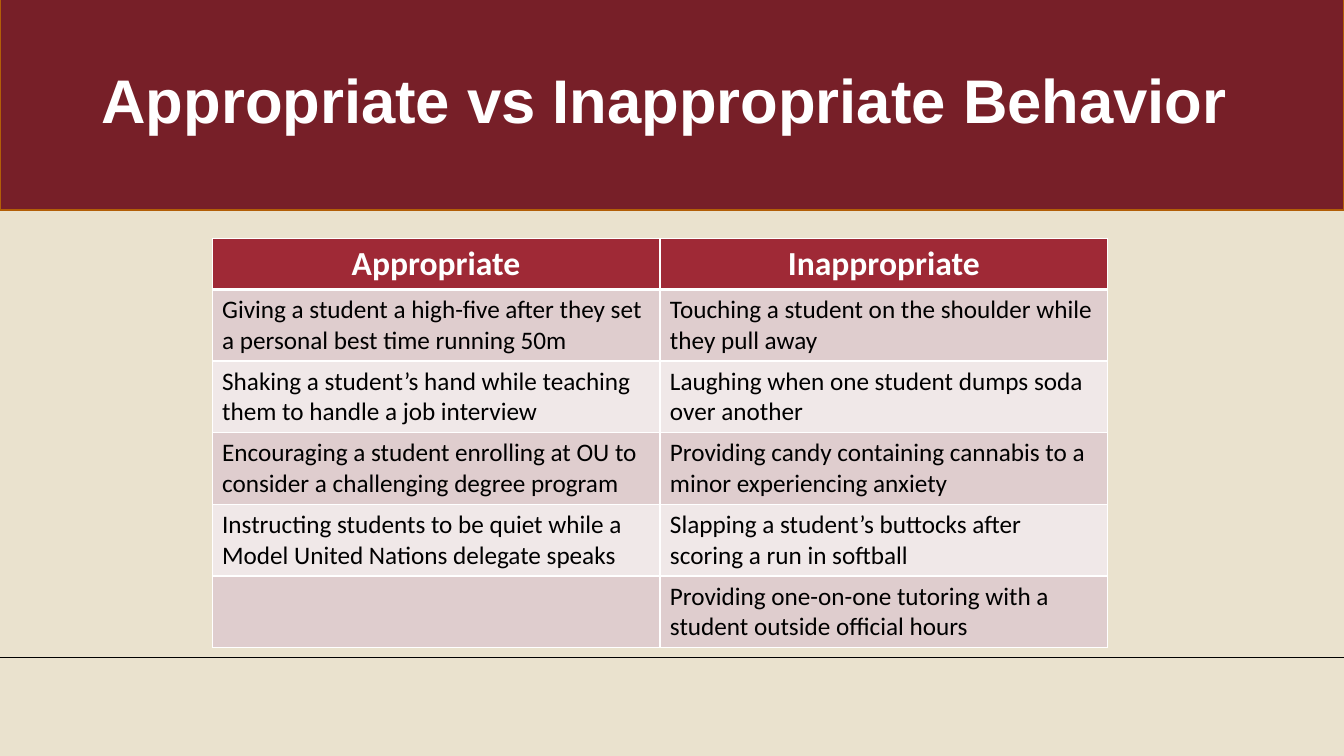
import dataclasses

import lxml.etree
import pptx
import pptx.dml.color
import pptx.enum.shapes
import pptx.enum.text
import pptx.oxml.ns
import pptx.util

PX = 9525
WIDE, HIGH = 1280, 720
HEADS = ("Appropriate", "Inappropriate")
ROWS = (
    ("Giving a student a high-five after they set a personal best time running 50m",
     "Touching a student on the shoulder while they pull away"),
    ("Shaking a student’s hand while teaching them to handle a job interview",
     "Laughing when one student dumps soda over another"),
    ("Encouraging a student enrolling at OU to consider a challenging degree program",
     "Providing candy containing cannabis to a minor experiencing anxiety"),
    ("Instructing students to be quiet while a Model United Nations delegate speaks",
     "Slapping a student’s buttocks after scoring a run in softball"),
    ("", "Providing one-on-one tutoring with a student outside official hours"),
)


@dataclasses.dataclass(frozen=True)
class Theme:
    """Colours, fonts and type sizes of the slide."""
    sand: str = "EAE2CE"
    wine: str = "771F28"
    amber: str = "B25E07"
    red: str = "9F2936"
    bands: tuple = ("DFCDCE", "F0E8E8")
    white: str = "FFFFFF"
    black: str = "000000"
    title_font: str = "Arial"
    body_font: str = "Calibri"
    title_size: int = 44
    head_size: int = 24
    body_size: int = 18


THEME = Theme()


def rgb(code):
    """Turn a hex code into a colour."""
    return pptx.dml.color.RGBColor.from_string(code)


def emu(*sizes):
    """Turn px lengths into EMU."""
    return [size * PX for size in sizes]


def paint(fill, code):
    """Make a fill solid in one colour."""
    fill.solid()
    fill.fore_color.rgb = rgb(code)


def style(para, face, size, code, bold):
    """Set the font of a paragraph."""
    font = para.font
    font.name, font.size, font.bold = face, pptx.util.Pt(size), bold
    font.color.rgb = rgb(code)


def edge(cell, side, width):
    """Draw one white border of a cell."""
    name = pptx.oxml.ns.qn
    line = lxml.etree.SubElement(cell._tc.get_or_add_tcPr(), name("a:ln" + side),
                                 w=str(pptx.util.Pt(width)))
    fill = lxml.etree.SubElement(line, name("a:solidFill"))
    lxml.etree.SubElement(fill, name("a:srgbClr"), val=THEME.white)


def banner(slide, left, top, wide, high):
    """Place the title on its dark band."""
    band = slide.shapes.add_shape(pptx.enum.shapes.MSO_SHAPE.RECTANGLE,
                                  *emu(left, top, wide, high))
    band.shadow.inherit = False
    paint(band.fill, THEME.wine)
    band.line.color.rgb = rgb(THEME.amber)
    band.line.width = pptx.util.Pt(1)

    title = slide.shapes.title
    title.element.getparent().append(title.element)
    title.left, title.top, title.width, title.height = emu(
        left + 87, top + 41, wide - 155, 139)
    frame = title.text_frame
    frame.text = "Appropriate vs Inappropriate Behavior"
    frame.word_wrap = True
    frame.auto_size = pptx.enum.text.MSO_AUTO_SIZE.NONE
    frame.vertical_anchor = pptx.enum.text.MSO_ANCHOR.MIDDLE
    para = frame.paragraphs[0]
    para.alignment = pptx.enum.text.PP_ALIGN.LEFT
    para.line_spacing = 0.9
    style(para, THEME.title_font, THEME.title_size, THEME.white, True)


def rule(slide, left, top, wide):
    """Draw the thin line above the footer."""
    line = slide.shapes.add_connector(pptx.enum.shapes.MSO_CONNECTOR.STRAIGHT,
                                      *emu(left, top, left + wide, top))
    line.line.color.rgb = rgb(THEME.black)
    line.line.width = pptx.util.Pt(0.5)
    lxml.etree.SubElement(line.element.spPr, pptx.oxml.ns.qn("a:effectLst"))


def grid(slide, left, top, wide, head, step):
    """Place the table of paired examples."""
    high = head + step * len(ROWS)
    table = slide.shapes.add_table(len(ROWS) + 1, len(HEADS),
                                   *emu(left, top, wide, high)).table
    for r, words in enumerate((HEADS, *ROWS)):
        first = r == 0
        table.rows[r].height = (head if first else step) * PX
        for c, text in enumerate(words):
            cell = table.cell(r, c)
            for side in "LRTB":
                edge(cell, side, 3 if (r, side) in ((0, "B"), (1, "T")) else 1)
            paint(cell.fill, THEME.red if first else THEME.bands[(r - 1) % 2])
            cell.text = text
            para = cell.text_frame.paragraphs[0]
            if first:
                para.alignment = pptx.enum.text.PP_ALIGN.CENTER
                style(para, THEME.body_font, THEME.head_size, THEME.white, True)
            else:
                style(para, THEME.body_font, THEME.body_size, THEME.black, False)


def main():
    """Build and save the slide."""
    deck = pptx.Presentation()
    deck.slide_width, deck.slide_height = emu(WIDE, HIGH)
    slide = deck.slides.add_slide(deck.slide_layouts.get_by_name("Title Only"))
    paint(slide.background.fill, THEME.sand)
    banner(slide, 0, -12, WIDE, 212)
    rule(slide, 0, 626, WIDE)
    grid(slide, 202, 227, 853, 48, 68)
    deck.save("out.pptx")


if __name__ == "__main__":
    main()
